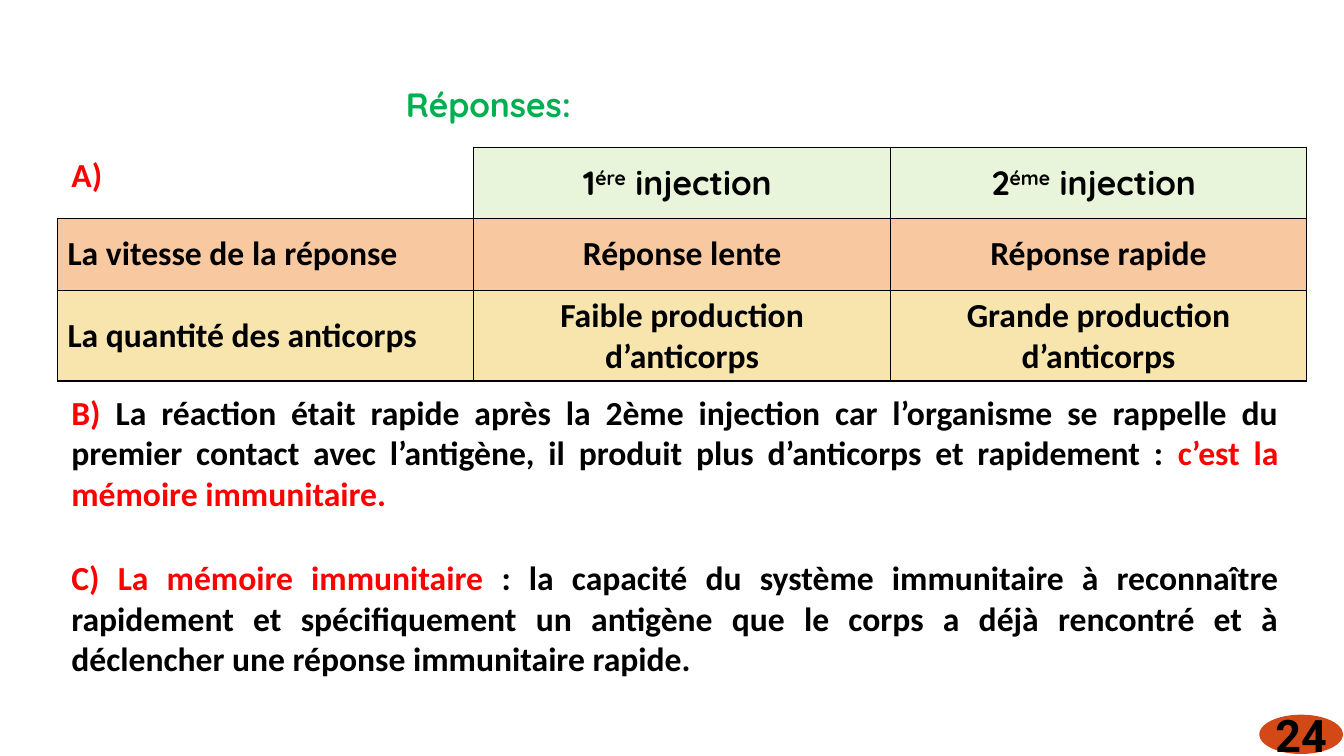
import pptx
import pptx.dml.color
import pptx.enum.shapes
import pptx.enum.text
import pptx.oxml
import pptx.oxml.ns
import pptx.util

Inches = pptx.util.Inches
Align = pptx.enum.text.PP_ALIGN
Anchor = pptx.enum.text.MSO_ANCHOR

COLORS = {
    "black": "000000",
    "red": "FF0000",
    "green": "00B050",
    "header": "E9F5DB",
    "speed": "F8C9A0",
    "quantity": "F7E5AD",
    "badge": "D34817",
}


def rgb(name):
    return pptx.dml.color.RGBColor.from_string(COLORS[name])


def write(frame, runs, font="Calibri", size=24, align=Align.LEFT):
    paragraph = frame.paragraphs[0]
    paragraph.alignment = align
    paragraph.font.name = font
    paragraph.font.size = pptx.util.Pt(size)
    paragraph.font.bold = True
    for text, color in runs:
        run = paragraph.add_run()
        run.text = text
        run.font.color.rgb = rgb(color)
    return paragraph


def add_text(slide, box, runs, wrap=True, **style):
    shape = slide.shapes.add_textbox(*map(Inches, box))
    shape.text_frame.word_wrap = wrap
    write(shape.text_frame, runs, **style)


def set_borders(cell, visible):
    properties = cell._tc.get_or_add_tcPr()
    namespace = pptx.oxml.ns.nsdecls("a")
    for side in "LRTB":
        fill = "<a:noFill/>"
        if side in visible:
            fill = f'<a:solidFill><a:srgbClr val="{COLORS["black"]}"/></a:solidFill>'
        properties.append(pptx.oxml.parse_xml(
            f'<a:ln{side} {namespace} w="12700">{fill}</a:ln{side}>'))


def add_comparison(slide, box):
    rows = [
        (0.71, "header", ["", ("1", "ére", " injection "), ("2", "éme", " injection ")]),
        (0.71, "speed", ["La vitesse de la réponse", "Réponse lente", "Réponse rapide"]),
        (0.9, "quantity", ["La quantité des anticorps", "Faible production d’anticorps",
                           "Grande production d’anticorps"]),
    ]
    table = slide.shapes.add_table(len(rows), 3, *map(Inches, box)).table
    table.first_row = table.horz_banding = False
    for column in table.columns:
        column.width = Inches(box[2] / 3)
    for row_index, (height, color, contents) in enumerate(rows):
        table.rows[row_index].height = Inches(height)
        for column_index, content in enumerate(contents):
            cell = table.cell(row_index, column_index)
            cell.vertical_anchor = Anchor.MIDDLE
            set_borders(cell, "LRTB" if content else "RB")
            if not content:
                cell.fill.background()
                continue
            cell.fill.solid()
            cell.fill.fore_color.rgb = rgb(color)
            align = Align.CENTER if column_index else Align.LEFT
            if color == "header":
                paragraph = write(cell.text_frame, [(part, "black") for part in content],
                                  font="Quicksand", align=align)
                paragraph.runs[1]._r.get_or_add_rPr().set("baseline", "30000")
            else:
                write(cell.text_frame, [(content, "black")], align=align)


def add_page_badge(slide, box, number):
    badge = slide.shapes.add_shape(pptx.enum.shapes.MSO_SHAPE.OVAL, *map(Inches, box))
    badge.shadow.inherit = False
    badge.fill.solid()
    badge.fill.fore_color.rgb = rgb("badge")
    badge.line.fill.background()
    frame = badge.text_frame
    frame.margin_left = frame.margin_right = frame.margin_top = frame.margin_bottom = 0
    frame.word_wrap = False
    frame.vertical_anchor = Anchor.MIDDLE
    write(frame, [(number, "black")], font="Roboto", size=32, align=Align.CENTER)


def build_answers_slide(presentation):
    slide = presentation.slides.add_slide(presentation.slide_layouts[6])
    add_text(slide, (0.61, 3.84, 12.17, 1.31), [
        ("B) ", "red"),
        ("La réaction était rapide après la 2ème injection car l’organisme se rappelle du "
         "premier contact avec l’antigène, il produit plus d’anticorps et rapidement : ", "black"),
        ("c’est la mémoire immunitaire.", "red"),
    ], align=Align.JUSTIFY)
    add_text(slide, (3.29, 0.78, 3.11, 0.5), [("Réponses:", "green")],
             font="Quicksand", align=Align.CENTER)
    add_text(slide, (0.61, 1.48, 0.59, 0.5), [("A)", "red")], wrap=False)
    add_comparison(slide, (0.57, 1.46, 12.39, 2.32))
    add_text(slide, (0.61, 5.48, 12.17, 1.31), [
        ("C) La mémoire immunitaire ", "red"),
        (": la capacité du système immunitaire à reconnaître rapidement et spécifiquement un "
         "antigène que le corps a déjà rencontré et à déclencher une réponse immunitaire rapide.",
         "black"),
    ], align=Align.JUSTIFY)
    add_page_badge(slide, (12.49, 7.09, 0.83, 0.39), "24")


def main():
    presentation = pptx.Presentation()
    presentation.slide_width = Inches(13.33)
    presentation.slide_height = Inches(7.5)
    build_answers_slide(presentation)
    presentation.save("out.pptx")


if __name__ == "__main__":
    main()
